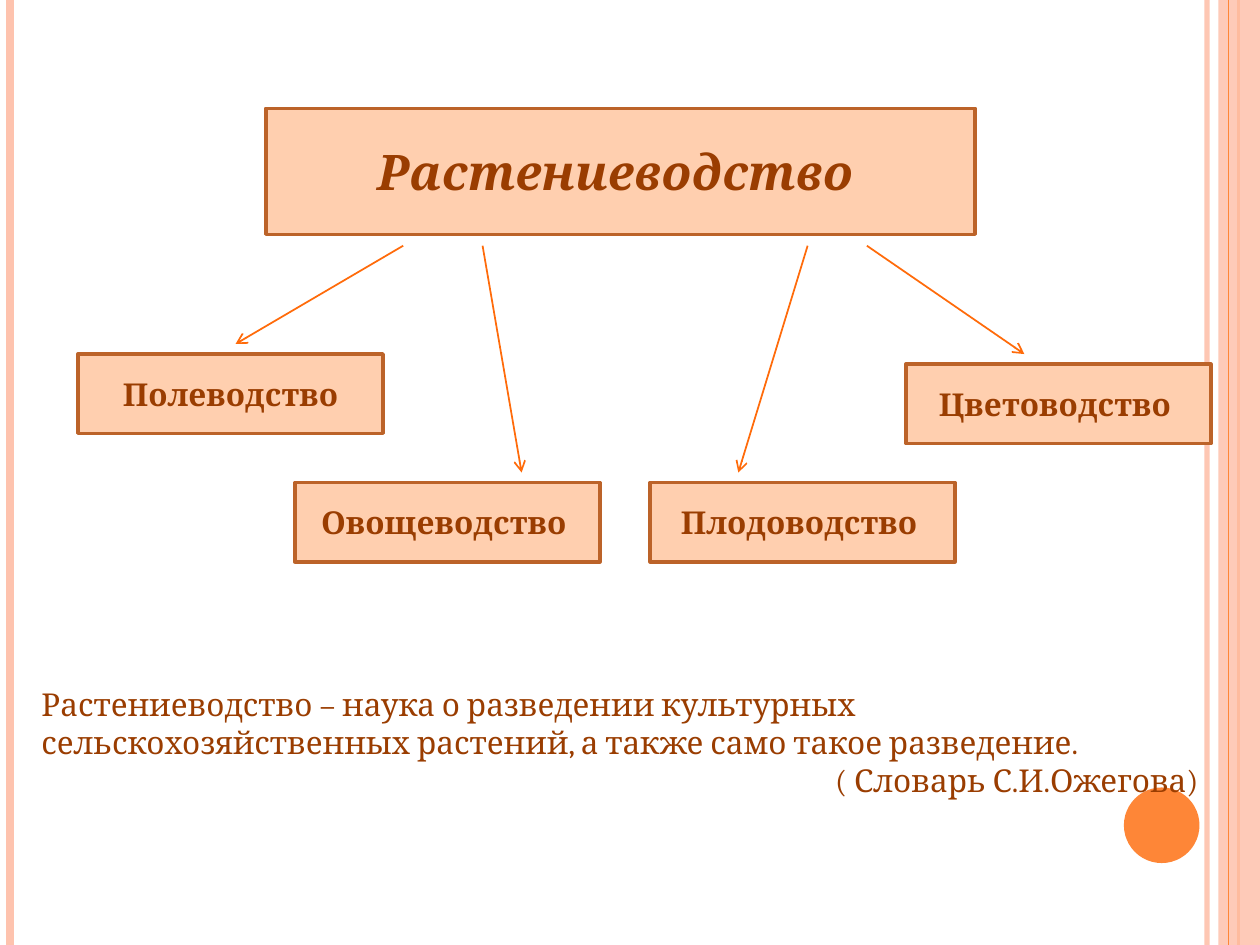
from lxml.etree import SubElement
from pptx import Presentation
from pptx.dml.color import RGBColor
from pptx.enum.shapes import MSO_CONNECTOR as Connector, MSO_SHAPE as Shape
from pptx.enum.text import MSO_ANCHOR as Anchor, MSO_AUTO_SIZE as AutoSize, PP_ALIGN as Align
from pptx.oxml.ns import qn
from pptx.util import Inches, Pt


def paint(color_format, hex_color, opacity=None):
    """Set a colour, with an optional opacity in percent."""
    color_format.rgb = RGBColor.from_string(hex_color)
    if opacity is not None:
        for color in color_format._xFill.iter(qn("a:srgbClr")):
            SubElement(color, qn("a:alpha"), val=str(opacity * 1000))


def write(paragraph, text, font="Cambria", size=18, color="9A3D01",
          bold=False, italic=False, align=Align.LEFT):
    paragraph.alignment = align
    run = paragraph.add_run()
    run.text = text
    run.font.name, run.font.size = font, Pt(size)
    run.font.bold, run.font.italic = bold, italic
    paint(run.font.color, color)


class Diagram:
    BOX_FILL, BOX_LINE = "FFCFAF", "BC6329"
    ARROW, ORANGE, PINK = "FF6B0A", "FE8637", "FEC3AE"

    def __init__(self, slide):
        self.slide = slide

    def line(self, start, end, color, width, opacity=None, arrow=False):
        points = [Inches(value) for value in (*start, *end)]
        connector = self.slide.shapes.add_connector(Connector.STRAIGHT, *points)
        connector.line.width = Pt(width)
        connector.line.fill.solid()
        paint(connector.line.fill.fore_color, color)
        if opacity is not None:
            for rgb in connector.line._ln.iter(qn("a:srgbClr")):
                SubElement(rgb, qn("a:alpha"), val=str(opacity * 1000))
        if arrow:
            SubElement(connector.line._ln, qn("a:tailEnd"), type="arrow")
        SubElement(connector._element.spPr, qn("a:effectLst"))

    def rule(self, x, color, width, opacity=None):
        """Draw a vertical line over the full slide height."""
        self.line((x, 0), (x, 7.5), color, width, opacity)

    def shape(self, kind, left, top, width, height, color, opacity=None):
        shape = self.slide.shapes.add_shape(
            kind, Inches(left), Inches(top), Inches(width), Inches(height))
        shape.shadow.inherit = False
        shape.line.fill.background()
        shape.fill.solid()
        paint(shape.fill.fore_color, color)
        if opacity is not None:
            for rgb in shape._element.spPr.iter(qn("a:srgbClr")):
                SubElement(rgb, qn("a:alpha"), val=str(opacity * 1000))
        return shape

    def label(self, box, text, **style):
        """Give a box the diagram's fill, outline and centred bold text."""
        box.fill.solid()
        paint(box.fill.fore_color, self.BOX_FILL)
        box.line.width = Pt(2)
        paint(box.line.color, self.BOX_LINE)
        frame = box.text_frame
        frame.auto_size, frame.word_wrap = AutoSize.NONE, True
        frame.vertical_anchor = Anchor.MIDDLE
        write(frame.paragraphs[0], text, bold=True, align=Align.CENTER, **style)

    def heading(self, text, left, top, width, height):
        title = self.slide.shapes.title
        title.left, title.top = Inches(left), Inches(top)
        title.width, title.height = Inches(width), Inches(height)
        self.label(title, text, size=28, italic=True)

    def branch(self, text, left, top, start, end):
        self.line(start, end, self.ARROW, 1, arrow=True)
        box = self.shape(Shape.RECTANGLE, left, top, 2.42, 0.63, self.BOX_FILL)
        self.label(box, text)

    def definition(self, text, source, left, top, width, height):
        frame = self.slide.shapes.add_textbox(
            Inches(left), Inches(top), Inches(width), Inches(height)).text_frame
        frame.word_wrap = True
        frame.auto_size = AutoSize.SHAPE_TO_FIT_TEXT
        write(frame.paragraphs[0], text)
        write(frame.add_paragraph(), source, align=Align.RIGHT)

    def side_bands(self):
        self.rule(9.58, self.PINK, 3, opacity=93)
        self.rule(0.08, self.PINK, 4.5)
        self.rule(9.83, self.ORANGE, 1.5)
        self.shape(Shape.RECTANGLE, 9.67, 0, 0.33, 7.5, self.PINK, opacity=87)
        self.rule(9.75, self.ORANGE, 0.75)
        self.shape(Shape.OVAL, 8.92, 6.25, 0.6, 0.6, self.ORANGE)


def main():
    deck = Presentation()
    deck.slide_width, deck.slide_height = Inches(10), Inches(7.5)
    diagram = Diagram(deck.slides.add_slide(deck.slide_layouts[5]))
    diagram.side_bands()
    diagram.heading("Растениеводство ", 2.11, 0.86, 5.63, 1)
    arrow_top = 1.95
    branches = [
        ("Полеводство", 0.62, 2.81, 3.2, (1.87, 2.73)),
        ("Овощеводство ", 2.34, 3.83, 3.83, (4.14, 3.75)),
        ("Плодоводство ", 5.16, 3.83, 6.41, (5.86, 3.75)),
        ("Цветоводство ", 7.19, 2.89, 6.88, (8.13, 2.81)),
    ]
    for text, left, top, arrow_x, arrow_end in branches:
        diagram.branch(text, left, top, (arrow_x, arrow_top), arrow_end)
    diagram.definition(
        "Растениеводство – наука о разведении культурных "
        "сельскохозяйственных растений, а также само такое разведение.",
        "( Словарь С.И.Ожегова)", 0.23, 5.39, 9.38, 1.01)
    deck.save("out.pptx")


if __name__ == "__main__":
    main()
